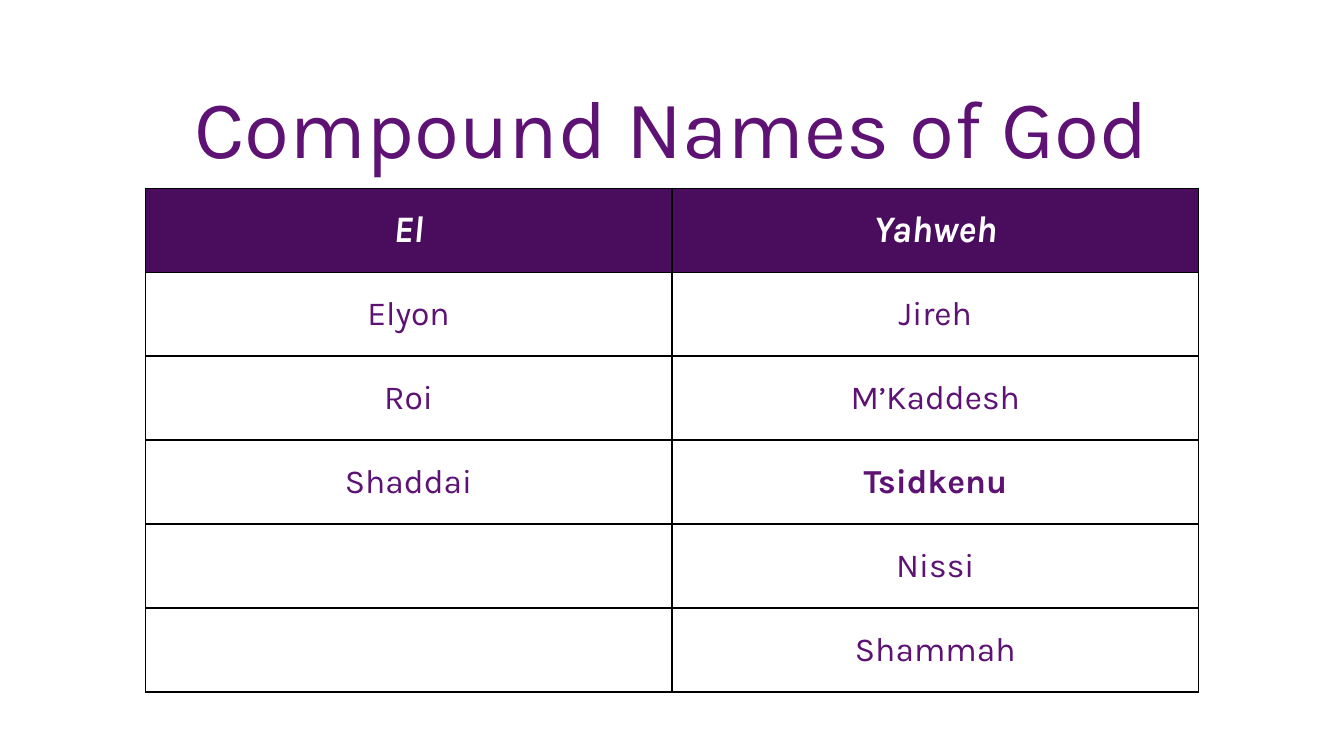
from lxml.etree import SubElement
from pptx import Presentation
from pptx.dml.color import RGBColor
from pptx.enum.text import MSO_ANCHOR, PP_ALIGN
from pptx.oxml.ns import qn
from pptx.util import Inches, Pt

PURPLE, DARK_PURPLE, WHITE, BLACK = "5D1274", "4A0D5E", "FFFFFF", "000000"
ROW_HEIGHT, COLUMN_WIDTH = Inches(0.625), Inches(3.92)


def style_text(text_frame, size, color, bold=False, italic=False):
    paragraph = text_frame.paragraphs[0]
    paragraph.alignment = PP_ALIGN.CENTER
    for run in paragraph.runs:
        run.font.name = "Karla"
        run.font.size = Pt(size)
        run.font.bold = bold
        run.font.italic = italic
        run.font.color.rgb = RGBColor.from_string(color)


def add_borders(cell, color, width):
    properties = cell._tc.get_or_add_tcPr()
    for position, side in enumerate(("a:lnL", "a:lnR", "a:lnT", "a:lnB")):
        line = SubElement(properties, qn(side), w=str(Pt(width)))
        fill = SubElement(line, qn("a:solidFill"))
        SubElement(fill, qn("a:srgbClr"), val=color)
        # Borders come before the cell fill
        properties.insert(position, line)


presentation = Presentation()
presentation.slide_width = Inches(10)
presentation.slide_height = Inches(5.625)
slide = presentation.slides.add_slide(presentation.slide_layouts[6])

# Title
title = slide.shapes.add_textbox(Inches(0.5), Inches(0.4), Inches(9), Inches(1.17))
title.text_frame.word_wrap = True
title.text_frame.vertical_anchor = MSO_ANCHOR.MIDDLE
title.text_frame.text = "Compound Names of God"
title.text_frame.paragraphs[0].line_spacing = 0.9
style_text(title.text_frame, 44, PURPLE)

# Table of names, with a header row
names = [
    ("El", "Yahweh"),
    ("Elyon", "Jireh"),
    ("Roi", "M’Kaddesh"),
    ("Shaddai", "Tsidkenu"),
    ("", "Nissi"),
    ("", "Shammah"),
]
table = slide.shapes.add_table(
    len(names), 2, Inches(1.08), Inches(1.4),
    2 * COLUMN_WIDTH, len(names) * ROW_HEIGHT,
).table
table.horz_banding = False
for column in table.columns:
    column.width = COLUMN_WIDTH

for row_index, row_names in enumerate(names):
    table.rows[row_index].height = ROW_HEIGHT
    is_header = row_index == 0
    for column_index, name in enumerate(row_names):
        cell = table.cell(row_index, column_index)
        cell.vertical_anchor = MSO_ANCHOR.MIDDLE
        if is_header:
            cell.fill.solid()
            cell.fill.fore_color.rgb = RGBColor.from_string(DARK_PURPLE)
        else:
            cell.fill.background()
        add_borders(cell, BLACK, 0.75)
        cell.text_frame.text = name
        if is_header:
            style_text(cell.text_frame, 20, WHITE, bold=True, italic=True)
        else:
            style_text(cell.text_frame, 18, PURPLE, bold=name == "Tsidkenu")

presentation.save("out.pptx")
